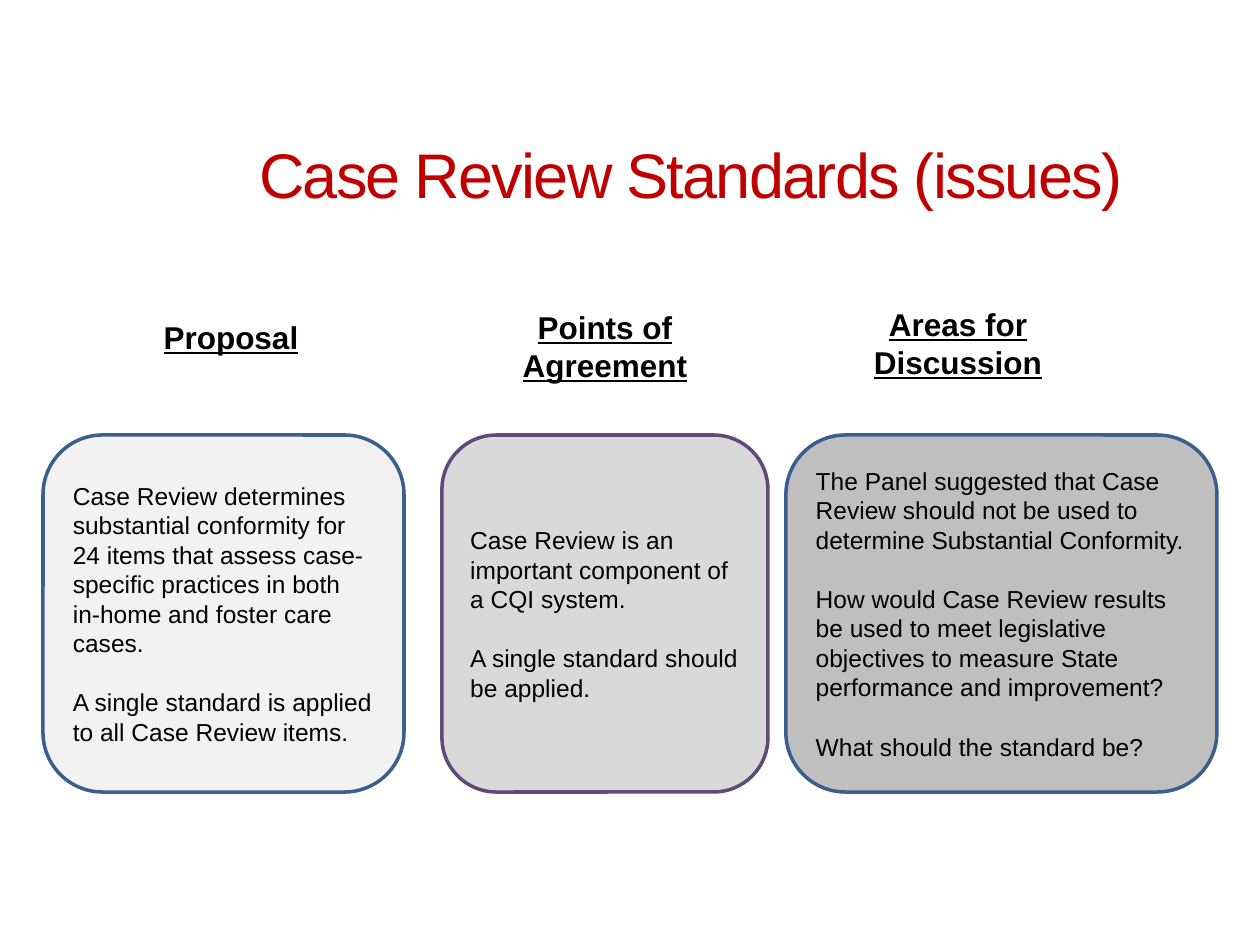
from pptx import Presentation
from pptx.dml.color import RGBColor
from pptx.enum.shapes import MSO_SHAPE
from pptx.enum.text import MSO_ANCHOR, PP_ALIGN
from pptx.util import Pt

PX = 914400 // 126
RED = RGBColor(0xC0, 0x00, 0x00)
BLACK = RGBColor(0x00, 0x00, 0x00)
BLUE = RGBColor(0x3A, 0x5F, 0x8C)
PURPLE = RGBColor(0x5F, 0x4A, 0x78)
GREYS = [RGBColor(v, v, v) for v in (0xF2, 0xD9, 0xBF)]

TITLE = "Case Review Standards (issues)"
CARD_TOP, CARD_HEIGHT = 435, 357
COLUMNS = [
    dict(heading="Proposal", heading_box=(151, 312, 160, 49), wrap=False,
         left=43, width=361, line=BLUE,
         body=["Case Review determines substantial conformity for 24 items that assess "
               "case-specific practices in both in-home and foster care cases.",
               "A single standard is applied to all Case Review items."]),
    dict(heading="Points of Agreement", heading_box=(479, 302, 252, 86), wrap=True,
         left=442, width=326, line=PURPLE,
         body=["Case Review is an important component of a CQI system.",
               "A single standard should be applied."]),
    dict(heading="Areas for Discussion", heading_box=(830, 299, 256, 86), wrap=True,
         left=786, width=431, line=BLUE,
         body=["The Panel suggested that Case Review should not be used to determine "
               "Substantial Conformity.",
               "How would Case Review results be used to meet legislative objectives to "
               "measure State performance and improvement?",
               "What should the standard be?"]),
]


def px(*lengths):
    return [n * PX for n in lengths]


def write(tf, paragraphs, size, color=BLACK, bold=False, underline=False,
          align=PP_ALIGN.LEFT, anchor=MSO_ANCHOR.MIDDLE, wrap=True, gap=0, spacing=None):
    tf.word_wrap = wrap
    tf.vertical_anchor = anchor
    for i, text in enumerate(paragraphs):
        p = tf.paragraphs[0] if i == 0 else tf.add_paragraph()
        p.alignment = align
        p.space_before = Pt(gap if i else 0)
        r = p.add_run()
        r.text = text
        font = r.font
        font.name, font.size, font.bold, font.underline = "Arial", Pt(size), bold, underline
        font.color.rgb = color
        if spacing is not None:
            r._r.get_or_add_rPr().set("spc", str(spacing))


prs = Presentation()
prs.slide_width, prs.slide_height = px(1260, 945)
s = prs.slides.add_slide(prs.slide_layouts[5])

title = s.shapes.title
title.left, title.top, title.width, title.height = px(166, 95, 1050, 157)
write(title.text_frame, [TITLE], 36, color=RED, align=PP_ALIGN.CENTER, spacing=-100)

for column, fill in zip(COLUMNS, GREYS):
    heading = s.shapes.add_textbox(*px(*column["heading_box"]))
    write(heading.text_frame, [column["heading"]], 18, bold=True, underline=True,
          align=PP_ALIGN.CENTER, anchor=MSO_ANCHOR.TOP, wrap=column["wrap"])

    card = s.shapes.add_shape(MSO_SHAPE.ROUNDED_RECTANGLE,
                              *px(column["left"], CARD_TOP, column["width"], CARD_HEIGHT))
    card.shadow.inherit = False
    card.fill.solid()
    card.fill.fore_color.rgb = fill
    card.line.color.rgb = column["line"]
    card.line.width = Pt(2)
    write(card.text_frame, column["body"], 14, gap=17)

prs.save("out.pptx")
